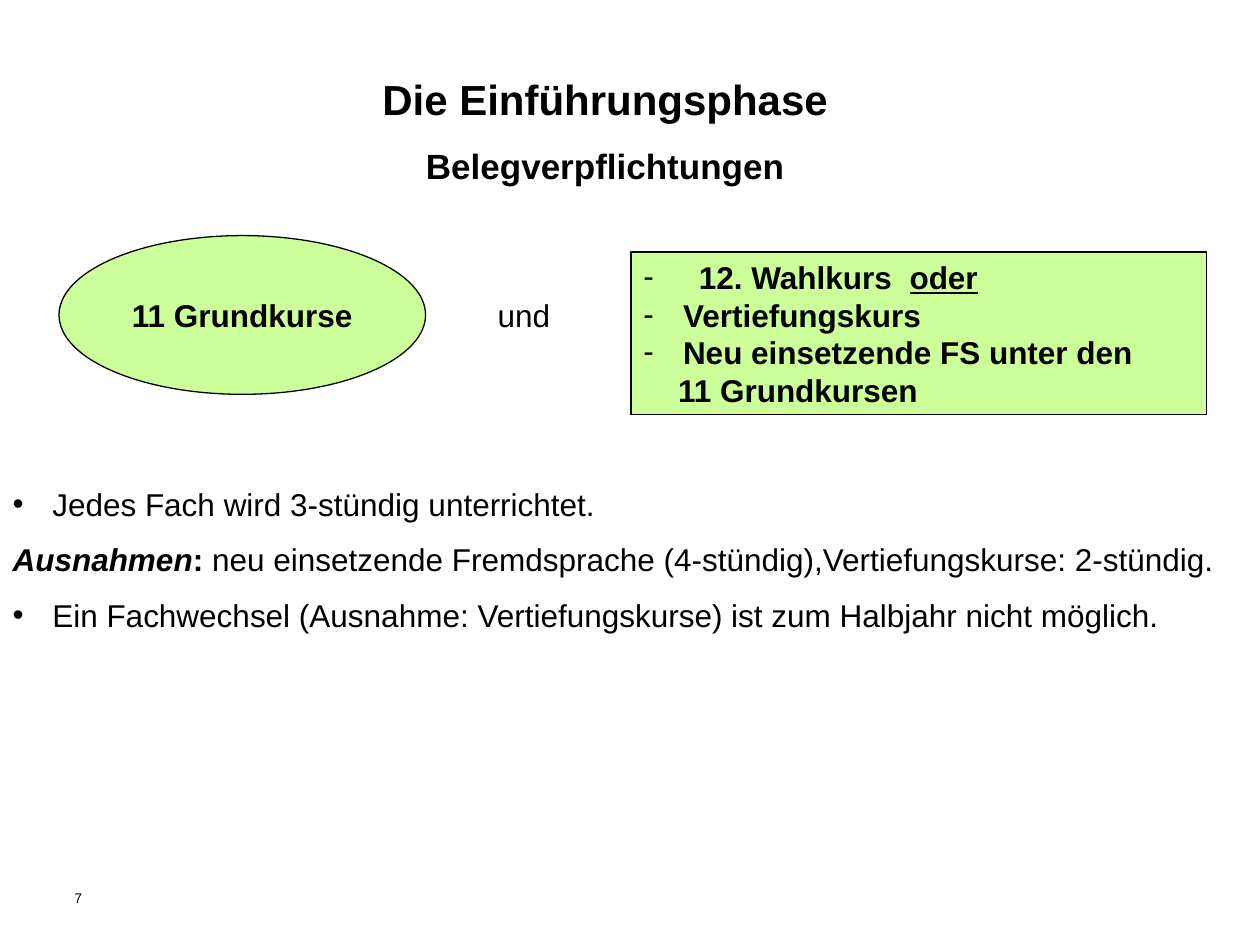
from pptx import Presentation
from pptx.dml.color import RGBColor
from pptx.enum.shapes import MSO_SHAPE
from pptx.enum.text import MSO_ANCHOR, MSO_AUTO_SIZE, PP_ALIGN
from pptx.oxml.ns import qn
from pptx.util import Cm, Pt
from lxml.etree import SubElement

# Content: a paragraph is a dict, its runs are (text, format) pairs
BOLD = {"bold": True}
TITLE = [
    {"runs": [("Die Einführungsphase", BOLD)], "size": "title"},
    {"runs": [("Belegverpflichtungen", BOLD)], "size": "subtitle", "before": 12},
]
COURSES = [{"runs": [("11 Grundkurse", BOLD)]}]
LINK = [{"runs": [("und", {})]}]
OPTIONS = [
    {"runs": [("12. Wahlkurs  ", BOLD), ("oder", {"bold": True, "underline": True})],
     "bullet": "-", "indent": 1.12},
    {"runs": [("Vertiefungskurs", BOLD)], "bullet": "-", "indent": 0.8},
    {"runs": [("Neu einsetzende FS unter den", BOLD)], "bullet": "-", "indent": 0.8},
    {"runs": [("11 Grundkursen", BOLD)], "indent": 0.7},
]
RULES = [
    {"runs": [("Jedes Fach wird 3-stündig unterrichtet.", {})],
     "bullet": "•", "indent": 0.8},
    {"runs": [("Ausnahmen", {"bold": True, "italic": True}), (":", BOLD),
              (" neu einsetzende Fremdsprache (4-stündig),"
               "Vertiefungskurse: 2-stündig.", {})], "before": 10},
    {"runs": [("Ein Fachwechsel (Ausnahme: Vertiefungskurse) ist zum Halbjahr "
               "nicht möglich.", {})], "bullet": "•", "indent": 0.8, "before": 10},
]
NUMBER = [{"runs": [("7", {})], "size": "number"}]

THEME = {
    "font": "Arial",
    "text": RGBColor(0, 0, 0),
    "line": RGBColor(0, 0, 0),
    "fill": RGBColor(0xCC, 0xFF, 0x99),
    "title": Pt(24), "subtitle": Pt(20), "body": Pt(18), "number": Pt(8),
}

# Left, top, width, height in cm
PLACES = {
    "title": (0, 1.35, 24.4, 5.33),
    "courses": (1.19, 4.75, 7.39, 3.2),
    "options": (12.72, 5.08, 11.61, 3.28),
    "link": (9.2, 5.84, 2.72, 1.02),
    "rules": (0, 9.65, 25.4, 3.3),
    "number": (1.5, 17.93, 0.81, 0.94),
}


def place(name):
    return [Cm(v) for v in PLACES[name]]


def move(sp, name):
    sp.left, sp.top, sp.width, sp.height = place(name)
    return sp


def set_bullet(p, char, indent):
    pPr = p._p.get_or_add_pPr()
    pPr.set("marL", str(Cm(indent)))
    pPr.set("indent", str(-Cm(indent) if char else 0))
    if char:
        SubElement(pPr, qn("a:buFont")).set("typeface", THEME["font"])
        SubElement(pPr, qn("a:buChar")).set("char", char)
    else:
        SubElement(pPr, qn("a:buNone"))


def write(sp, paragraphs, align=PP_ALIGN.LEFT, anchor=MSO_ANCHOR.TOP,
          wrap=True, inset=None, pitch=None):
    tf = sp.text_frame
    frame = {"word_wrap": wrap, "auto_size": MSO_AUTO_SIZE.NONE,
             "vertical_anchor": anchor}
    if inset is not None:
        frame.update({"margin_" + side: inset
                      for side in ("left", "top", "right", "bottom")})
    for key, value in frame.items():
        setattr(tf, key, value)
    for i, item in enumerate(paragraphs):
        p = tf.paragraphs[0] if i == 0 else tf.add_paragraph()
        set_bullet(p, item.get("bullet"), item.get("indent", 0))
        layout = {"alignment": align, "space_before": Pt(item.get("before", 0)),
                  "space_after": Pt(0), "line_spacing": pitch or 1.0}
        for key, value in layout.items():
            setattr(p, key, value)
        for text, extra in item["runs"]:
            r = p.add_run()
            r.text = text
            style = {"name": THEME["font"], "size": THEME[item.get("size", "body")],
                     "bold": False, **extra}
            for key, value in style.items():
                setattr(r.font, key, value)
            r.font.color.rgb = THEME["text"]


def add_panel(s, kind, name):
    sp = s.shapes.add_shape(kind, *place(name))
    sp.shadow.inherit = False
    sp.fill.solid()
    sp.fill.fore_color.rgb = THEME["fill"]
    sp.line.color.rgb = THEME["line"]
    sp.line.width = Pt(0.75)
    return sp


def main():
    prs = Presentation()
    prs.slide_width, prs.slide_height = Cm(25.4), Cm(19.05)
    s = prs.slides.add_slide(prs.slide_layouts[1])

    # Title and list placeholders
    write(move(s.shapes.title, "title"), TITLE, PP_ALIGN.CENTER)
    write(move(s.placeholders[1], "rules"), RULES)

    # Courses, linking word and options
    write(add_panel(s, MSO_SHAPE.OVAL, "courses"), COURSES,
          PP_ALIGN.CENTER, MSO_ANCHOR.MIDDLE, wrap=False)
    write(s.shapes.add_textbox(*place("link")), LINK, PP_ALIGN.CENTER)
    write(add_panel(s, MSO_SHAPE.RECTANGLE, "options"), OPTIONS, pitch=Pt(21.5))

    # Page number
    write(s.shapes.add_textbox(*place("number")), NUMBER, inset=0)

    prs.save("out.pptx")


if __name__ == "__main__":
    main()
